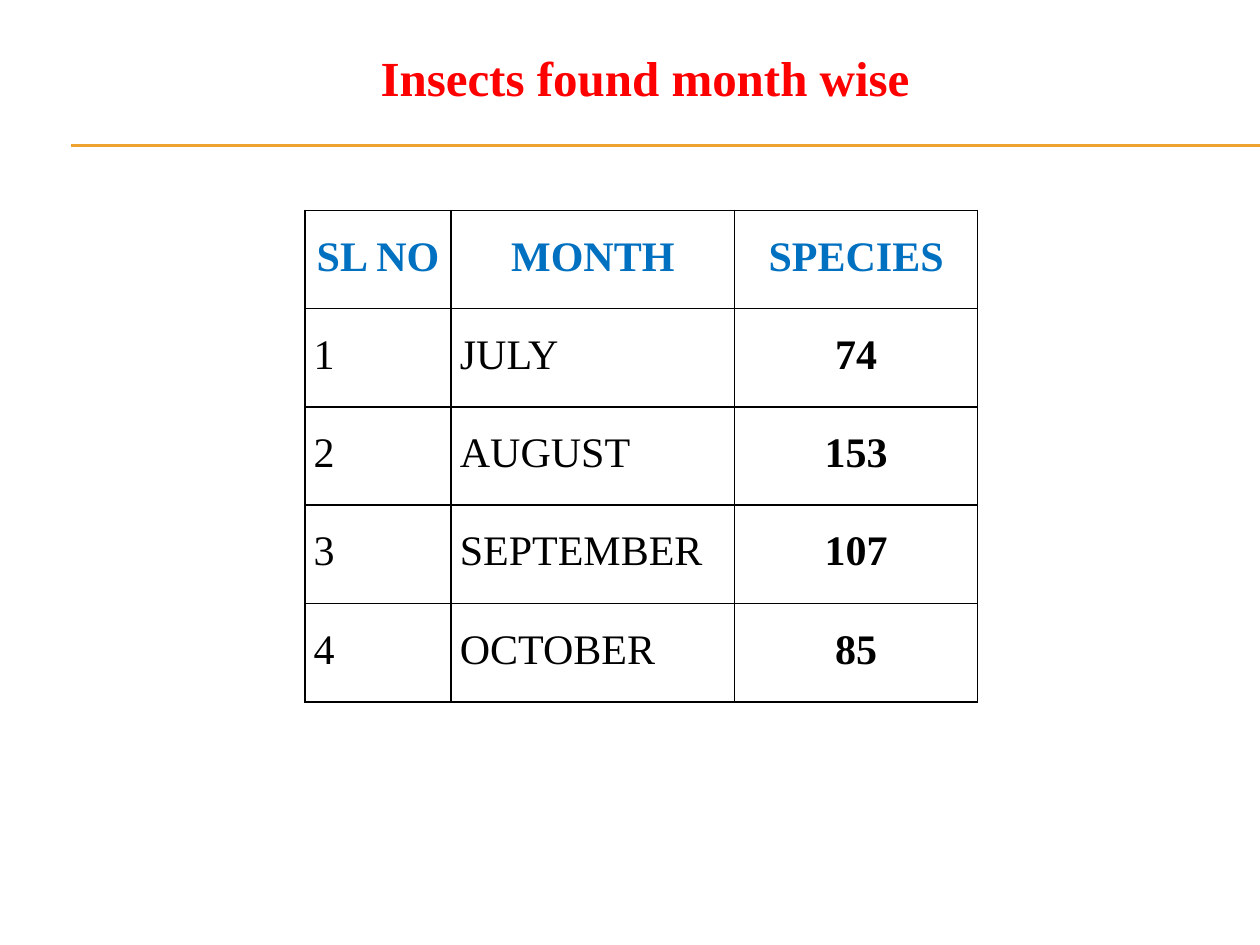
from typing import NamedTuple

from pptx import Presentation
from pptx.dml.color import RGBColor
from pptx.enum.shapes import MSO_CONNECTOR
from pptx.enum.text import MSO_ANCHOR, MSO_AUTO_SIZE, PP_ALIGN
from pptx.oxml.ns import qn
from pptx.util import Inches, Pt
from lxml import etree

LEFT, CENTER = PP_ALIGN.LEFT, PP_ALIGN.CENTER
TOP = MSO_ANCHOR.TOP
STRAIGHT = MSO_CONNECTOR.STRAIGHT
FIT_SHAPE = MSO_AUTO_SIZE.SHAPE_TO_FIT_TEXT
FONT = "Times New Roman"
BLACK, BLUE, RED, GOLD = "000000", "0070C0", "FF0000", "F0A22E"


class Column(NamedTuple):
    head: str
    width: float
    align: PP_ALIGN
    bold: bool


COLUMNS = [
    Column("SL NO", 1.16, LEFT, False),
    Column("MONTH", 2.25, LEFT, False),
    Column("SPECIES", 1.93, CENTER, True),
]
COUNTS = [("JULY", 74), ("AUGUST", 153), ("SEPTEMBER", 107), ("OCTOBER", 85)]
ROW_HEIGHT = 0.78


def color(code: str) -> RGBColor:
    return RGBColor.from_string(code)


def write(frame, text: str, *, size: float = 24, fill: str = BLACK,
          bold: bool = False, align: PP_ALIGN = LEFT, spacing: float = 1.0) -> None:
    par = frame.paragraphs[0]
    par.alignment = align
    par.line_spacing = spacing
    run = par.add_run()
    run.text = text
    font = run.font
    font.name, font.size, font.bold = FONT, Pt(size), bold
    font.color.rgb = color(fill)


def add_rule(slide, y: float) -> None:
    line = slide.shapes.add_connector(
        STRAIGHT, Inches(0.56), Inches(y), Inches(10), Inches(y))
    line.line.color.rgb = color(GOLD)
    line.line.width = Pt(0.75)
    etree.SubElement(line._element.spPr, qn("a:effectLst"))


def add_borders(cell) -> None:
    """Draw a 1 pt black line on each side, ahead of the cell's fill."""
    props = cell._tc.get_or_add_tcPr()
    for place, side in enumerate(("a:lnL", "a:lnR", "a:lnT", "a:lnB")):
        edge = etree.Element(qn(side), w=str(Pt(1)))
        fill = etree.SubElement(edge, qn("a:solidFill"))
        etree.SubElement(fill, qn("a:srgbClr"), val=BLACK)
        props.insert(place, edge)


def fill_cell(cell, text: str, **style) -> None:
    cell.margin_left = cell.margin_right = Inches(0.07)
    cell.margin_top = cell.margin_bottom = 0
    cell.vertical_anchor = TOP
    cell.fill.background()
    add_borders(cell)
    write(cell.text_frame, text, spacing=1.5, **style)


def add_title(slide, text: str) -> None:
    title = slide.shapes.title
    title.left, title.top = Inches(2.92), Inches(0.33)
    title.width, title.height = Inches(4.45), Inches(0.57)
    frame = title.text_frame
    frame.word_wrap = False
    frame.auto_size = FIT_SHAPE
    frame.vertical_anchor = TOP
    write(frame, text, size=28, fill=RED, bold=True)


def add_counts(slide) -> None:
    rows = len(COUNTS) + 1
    width = sum(col.width for col in COLUMNS)
    table = slide.shapes.add_table(
        rows, len(COLUMNS), Inches(2.42), Inches(1.67),
        Inches(width), Inches(rows * ROW_HEIGHT)).table
    table.horz_banding = False
    for row in table.rows:
        row.height = Inches(ROW_HEIGHT)
    for c, col in enumerate(COLUMNS):
        table.columns[c].width = Inches(col.width)
        fill_cell(table.cell(0, c), col.head, fill=BLUE, bold=True, align=CENTER)
    for r, (month, count) in enumerate(COUNTS, 1):
        for c, (col, value) in enumerate(zip(COLUMNS, (r, month, count))):
            fill_cell(table.cell(r, c), str(value), bold=col.bold, align=col.align)


def main() -> None:
    deck = Presentation()
    deck.slide_width, deck.slide_height = Inches(10), Inches(7.5)
    slide = deck.slides.add_slide(deck.slide_layouts[5])
    for y in (1.15, 1.16):
        add_rule(slide, y)
    add_title(slide, "Insects found month wise")
    add_counts(slide)
    deck.save("out.pptx")


if __name__ == "__main__":
    main()
